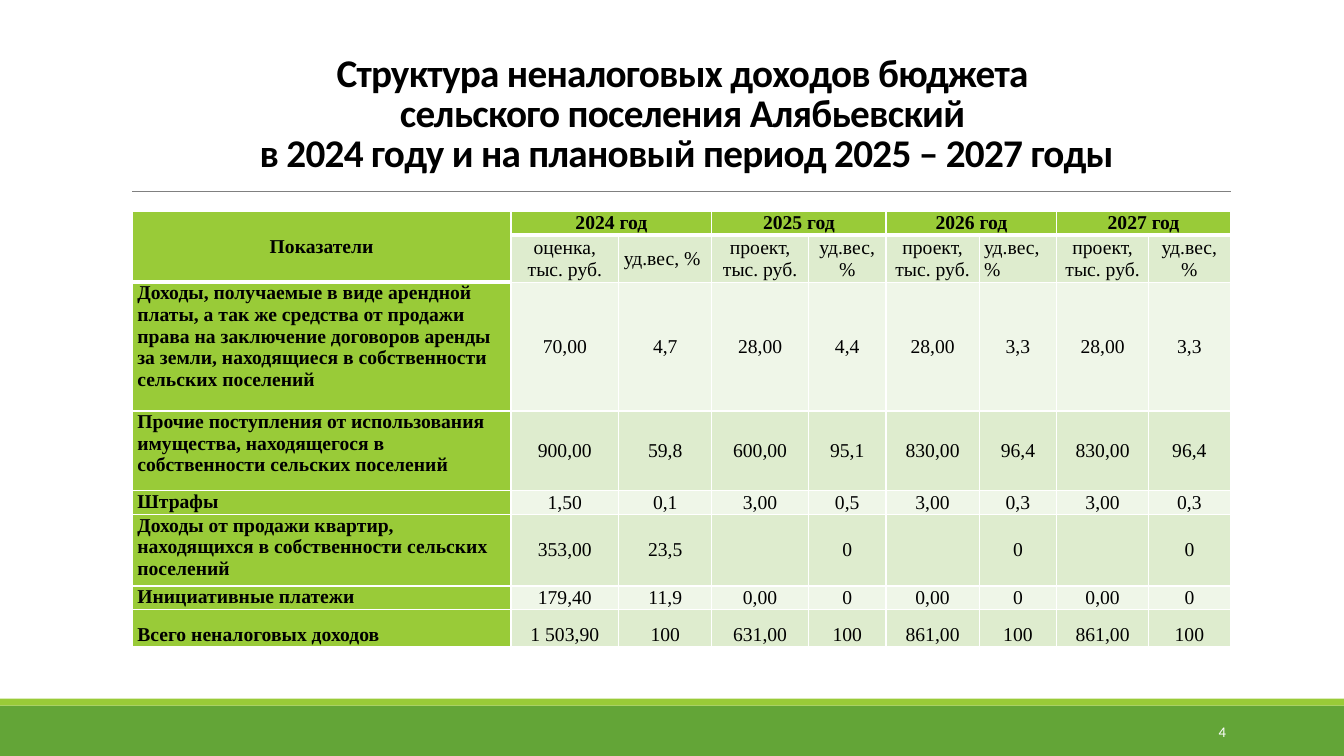
from pptx import Presentation
from pptx.dml.color import RGBColor
from pptx.enum.shapes import MSO_CONNECTOR, MSO_SHAPE
from pptx.enum.text import MSO_ANCHOR, PP_ALIGN
from pptx.oxml.ns import qn
from pptx.util import Pt
from lxml import etree

LEFT, CENTER, RIGHT = PP_ALIGN.LEFT, PP_ALIGN.CENTER, PP_ALIGN.RIGHT
TOP, MIDDLE, BOTTOM = MSO_ANCHOR.TOP, MSO_ANCHOR.MIDDLE, MSO_ANCHOR.BOTTOM

TITLE = ("Структура неналоговых доходов бюджета \v"
         "сельского поселения Алябьевский \v"
         "в 2024 году и на плановый период 2025 – 2027 годы")
PAGE_NUMBER = "4"
INDICATOR = "Показатели"
YEARS = ["2024 год", "2025 год", "2026 год", "2027 год"]
SUBHEADS = ["оценка, тыс. руб.", "уд.вес, %", "проект, тыс. руб.", "уд.вес, %",
            "проект, тыс. руб.", "уд.вес,%", "проект, тыс. руб.", "уд.вес, %"]
LEFT_SUBHEADS = {2, 6}  # table columns whose subhead is left-aligned
INCOMES = [
    ("Доходы, получаемые в виде арендной платы, а так же средства от продажи права "
     "на заключение договоров аренды за земли, находящиеся в собственности сельских поселений",
     "70,00", "4,7", "28,00", "4,4", "28,00", "3,3", "28,00", "3,3"),
    ("Прочие поступления от использования имущества, находящегося в собственности "
     "сельских поселений",
     "900,00", "59,8", "600,00", "95,1", "830,00", "96,4", "830,00", "96,4"),
    ("Штрафы", "1,50", "0,1", "3,00", "0,5", "3,00", "0,3", "3,00", "0,3"),
    ("Доходы от продажи квартир, находящихся в собственности сельских поселений",
     "353,00", "23,5", "", "0", "", "0", "", "0"),
    ("Инициативные платежи",
     "179,40", "11,9", "0,00", "0", "0,00", "0", "0,00", "0"),
    ("Всего неналоговых доходов",
     "1 503,90", "100", "631,00", "100", "861,00", "100", "861,00", "100"),
]

SLIDE_W, SLIDE_H = 960, 540
TABLE_X, TABLE_Y = 94.5, 151
COLUMN_WIDTHS = [270.5, 77, 66.5, 69, 55.5, 66.5, 55.5, 65.5, 58.5]
ROW_HEIGHTS = [17, 33.5, 92, 57, 17, 51, 17, 26]
THEME = {
    "green": "63A537", "lime": "99CB38", "bands": ("EFF6E8", "DEECCE"),
    "rule": "808080", "white": "FFFFFF", "black": "000000",
    "title_font": "Calibri", "table_font": "Times New Roman",
    "title_size": 28, "table_size": 14, "page_size": 10.5,
}


def rgb(name):
    return RGBColor.from_string(THEME.get(name, name))


def style(p, font, size, color, align, bold=False):
    p.alignment = align
    p.font.name, p.font.size, p.font.bold = font, Pt(size), bold
    p.font.color.rgb = rgb(color)


def add_bar(slide, y, h, color):
    """Full-width footer stripe."""
    sp = slide.shapes.add_shape(MSO_SHAPE.RECTANGLE, 0, Pt(y), Pt(SLIDE_W), Pt(h))
    sp.shadow.inherit = False
    sp.fill.solid()
    sp.fill.fore_color.rgb = rgb(color)
    sp.line.fill.background()


def add_text(slide, text, box, anchor):
    tf = slide.shapes.add_textbox(*map(Pt, box)).text_frame
    tf.word_wrap = True
    tf.vertical_anchor = anchor
    tf.text = text
    return tf.paragraphs[0]


def set_borders(cell, top=1, bottom=1):
    """White borders; they must precede the fill in the cell properties."""
    tcPr = cell._tc.get_or_add_tcPr()
    for i, (tag, width) in enumerate((("lnL", 1), ("lnR", 1), ("lnT", top), ("lnB", bottom))):
        ln = etree.Element(qn("a:" + tag), w=str(int(Pt(width))))
        fill = etree.SubElement(ln, qn("a:solidFill"))
        etree.SubElement(fill, qn("a:srgbClr"), val=THEME["white"])
        tcPr.insert(i, ln)


def fill_cell(cell, text, color, align, anchor, bold):
    cell.fill.solid()
    cell.fill.fore_color.rgb = rgb(color)
    cell.margin_left = cell.margin_right = Pt(3.6)
    cell.margin_top = cell.margin_bottom = 0
    cell.vertical_anchor = anchor
    cell.text = text
    style(cell.text_frame.paragraphs[0], THEME["table_font"], THEME["table_size"],
          "black", align, bold)


def add_income_table(slide):
    year_row = [INDICATOR]
    for year in YEARS:
        year_row += [year, ""]
    rows = [year_row, ["", *SUBHEADS], *INCOMES]
    table = slide.shapes.add_table(
        len(rows), len(COLUMN_WIDTHS), Pt(TABLE_X), Pt(TABLE_Y),
        Pt(sum(COLUMN_WIDTHS)), Pt(sum(ROW_HEIGHTS))).table
    for column, width in zip(table.columns, COLUMN_WIDTHS):
        column.width = Pt(width)
    for row, height in zip(table.rows, ROW_HEIGHTS):
        row.height = Pt(height)

    last = len(rows) - 1
    for r, row in enumerate(rows):
        for c, text in enumerate(row):
            header = r == 0 or c == 0
            is_label = c == 0 and r > 1
            left = is_label or (r == 1 and c in LEFT_SUBHEADS)
            anchor = BOTTOM if r == last else TOP if is_label else MIDDLE
            cell = table.cell(r, c)
            fill_cell(cell, text, "lime" if header else THEME["bands"][r % 2],
                      LEFT if left else CENTER, anchor, header)
            header_end = 1 if c == 0 else 0
            set_borders(cell, top=3 if r == header_end + 1 else 1,
                        bottom=3 if r <= header_end else 1)

    table.cell(0, 0).merge(table.cell(1, 0))
    for c in range(1, len(COLUMN_WIDTHS), 2):
        table.cell(0, c).merge(table.cell(0, c + 1))


def main():
    prs = Presentation()
    prs.slide_width, prs.slide_height = Pt(SLIDE_W), Pt(SLIDE_H)
    slide = prs.slides.add_slide(prs.slide_layouts[6])

    add_bar(slide, 504, 36, "green")
    add_bar(slide, 499, 5, "lime")

    rule = slide.shapes.add_connector(
        MSO_CONNECTOR.STRAIGHT, Pt(TABLE_X), Pt(136.8), Pt(879), Pt(136.8))
    rule.line.color.rgb = rgb("rule")
    rule.line.width = Pt(0.5)
    etree.SubElement(rule._element.spPr, qn("a:effectLst"))

    p = add_text(slide, TITLE, (74.2, 56.9, 832.3, 72), BOTTOM)
    style(p, THEME["title_font"], THEME["title_size"], "black", CENTER, bold=True)
    p.line_spacing = 0.85
    for r in p.runs:
        r._r.get_or_add_rPr().set("spc", "-50")

    add_income_table(slide)

    p = add_text(slide, PAGE_NUMBER, (779.8, 508.5, 103, 28.8), MIDDLE)
    style(p, THEME["title_font"], THEME["page_size"], "white", RIGHT)

    prs.save("out.pptx")


if __name__ == "__main__":
    main()
